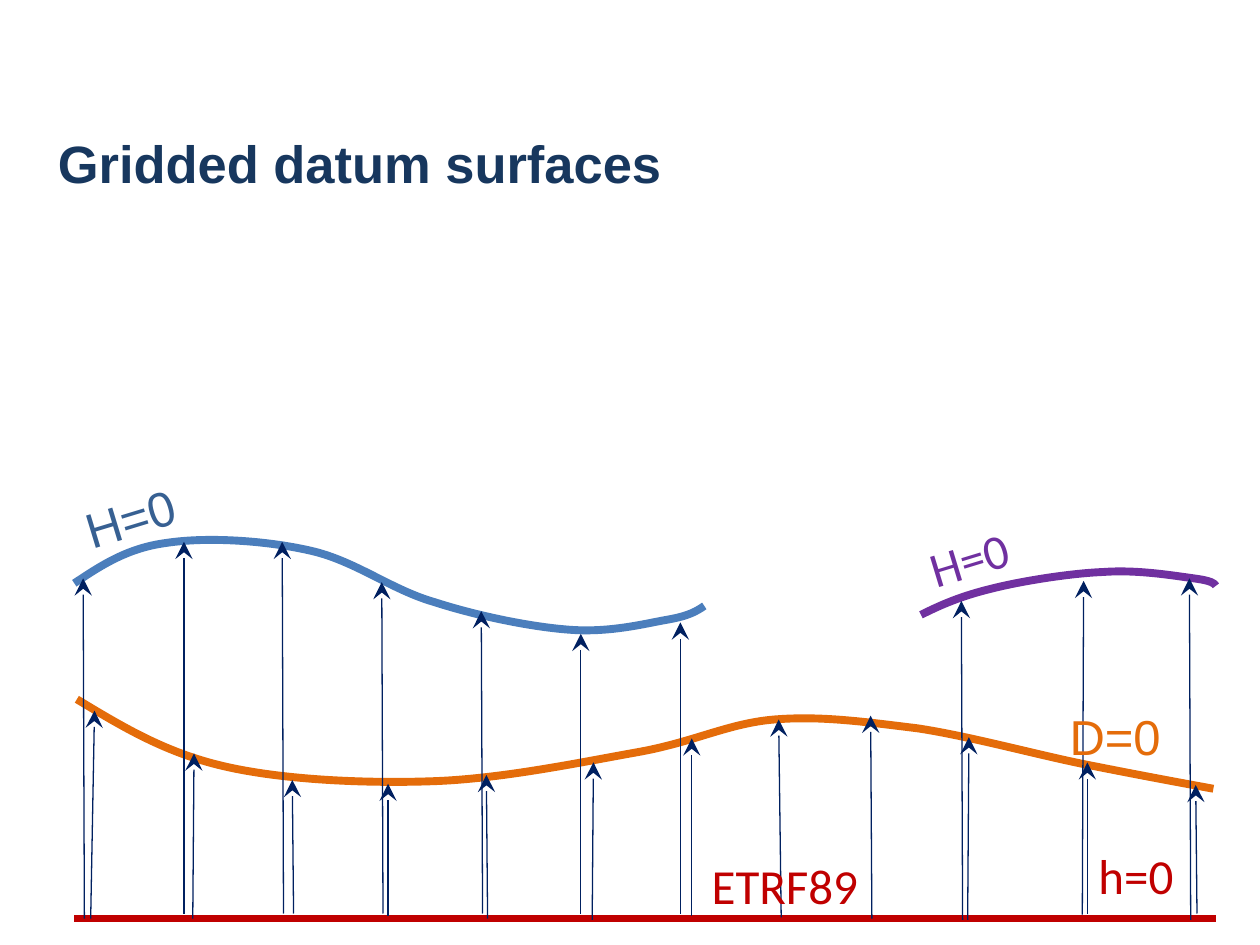
"""Build a slide of gridded datum surfaces above a reference line."""
from lxml import etree
from pptx import Presentation
from pptx.dml.color import RGBColor
from pptx.enum.shapes import MSO_CONNECTOR as Connector
from pptx.enum.text import MSO_ANCHOR as Anchor, MSO_AUTO_SIZE as AutoSize, PP_ALIGN as Align
from pptx.oxml.ns import qn
from pptx.util import Pt

PX = 9144
BLUE, PURPLE, ORANGE, RED, NAVY = "4B7EBC", "7030A0", "E46C0A", "C00000", "002060"


def color(value):
    return RGBColor.from_string(value)


def add_line(shapes, ends, tint, width):
    line = shapes.add_connector(Connector.STRAIGHT, *[value * PX for value in ends])
    line.line.color.rgb = color(tint)
    line.line.width = Pt(width)
    etree.SubElement(line._element.spPr, qn("a:effectLst"))
    return line


deck = Presentation()
deck.slide_width, deck.slide_height = 1000 * PX, 750 * PX
page = deck.slides.add_slide(deck.slide_layouts[5])

title = page.shapes.title
title.left, title.top, title.width, title.height = 36 * PX, 99 * PX, 928 * PX, 142 * PX
title.text_frame.text = "Gridded datum surfaces"
title.text_frame.vertical_anchor = Anchor.TOP
para = title.text_frame.paragraphs[0]
para.alignment = Align.LEFT
span = para.runs[0]
span.font.name, span.font.size, span.font.bold = "Arial", Pt(30), True
span.font.color.rgb = color("17375E")

surfaces = [
    (BLUE, [(59, 463), (80, 449), (101, 435), (132, 431), (164, 426), (211, 429), (246, 437),
            (282, 445), (310, 468), (345, 478), (379, 489), (423, 498), (454, 500),
            (485, 502), (512, 495), (529, 492), (547, 489), (553, 485), (559, 481)]),
    (PURPLE, [(731, 488), (747, 480), (763, 473), (788, 467), (812, 461), (850, 455), (876, 454),
              (903, 452), (932, 457), (947, 459), (962, 461), (964, 463), (965, 465)]),
    (ORANGE, [(61, 555), (96, 576), (130, 597), (177, 608), (224, 619), (290, 622), (345, 620),
              (399, 618), (461, 605), (506, 597), (551, 589), (578, 574), (615, 571),
              (652, 568), (687, 573), (728, 578), (768, 584), (819, 598), (858, 606),
              (898, 614), (930, 620), (963, 626)]),
]
for tint, points in surfaces:
    builder = page.shapes.build_freeform(*points[0], scale=PX)
    builder.add_line_segments(points[1:], close=False)
    surface = builder.convert_to_shape()
    surface.shadow.inherit = False
    surface.fill.background()
    surface.line.color.rgb = color(tint)
    surface.line.width = Pt(4.5)
    outline = surface._element.find(".//" + qn("a:path"))
    segments = outline.findall(qn("a:lnTo"))
    for start in range(0, len(segments), 3):
        curve = etree.SubElement(outline, qn("a:cubicBezTo"))
        for segment in segments[start:start + 3]:
            curve.append(segment[0])
            outline.remove(segment)

add_line(page.shapes, (59, 729, 965, 729), RED, 4.5)

arrow_groups = [
    [(67, 729, 66, 459), (146, 725, 146, 430), (225, 725, 224, 430), (304, 725, 303, 462),
     (383, 725, 382, 485), (461, 725, 461, 503), (540, 725, 540, 494)],
    [(764, 730, 763, 477), (859, 726, 860, 461), (945, 730, 944, 459)],
    [(72, 729, 75, 564), (153, 729, 154, 598), (233, 725, 232, 619), (308, 727, 308, 622),
     (387, 729, 386, 615), (470, 730, 471, 605), (549, 727, 549, 586), (620, 728, 618, 571),
     (692, 729, 691, 568), (768, 730, 769, 585), (863, 725, 863, 605), (950, 725, 949, 623)],
]
for arrows in arrow_groups:
    group = page.shapes.add_group_shape()
    for ends in arrows:
        arrow = add_line(group.shapes, ends, NAVY, 0.75)
        etree.SubElement(arrow.line._get_or_add_ln(), qn("a:tailEnd"), type="stealth", w="lg", len="lg")

labels = [
    ("H=0", 57, 381, 102, 343.1, "Arial", "376092"),
    ("H=0", 727, 412, 102, 343.1, "Calibri", PURPLE),
    ("h=0", 862, 666, 86, 0, "Calibri", RED),
    ("D=0", 839, 556, 95, 0, "Arial", ORANGE),
    ("ETRF89", 555, 674, 157, 0, "Calibri", RED),
]
for text, left, top, width, angle, font, tint in labels:
    box = page.shapes.add_textbox(left * PX, top * PX, width * PX, 57 * PX)
    box.rotation = angle
    box.text_frame.word_wrap = True
    box.text_frame.auto_size = AutoSize.SHAPE_TO_FIT_TEXT
    box.text_frame.text = text
    span = box.text_frame.paragraphs[0].runs[0]
    span.font.name, span.font.size = font, Pt(28)
    span.font.color.rgb = color(tint)

deck.save("out.pptx")
